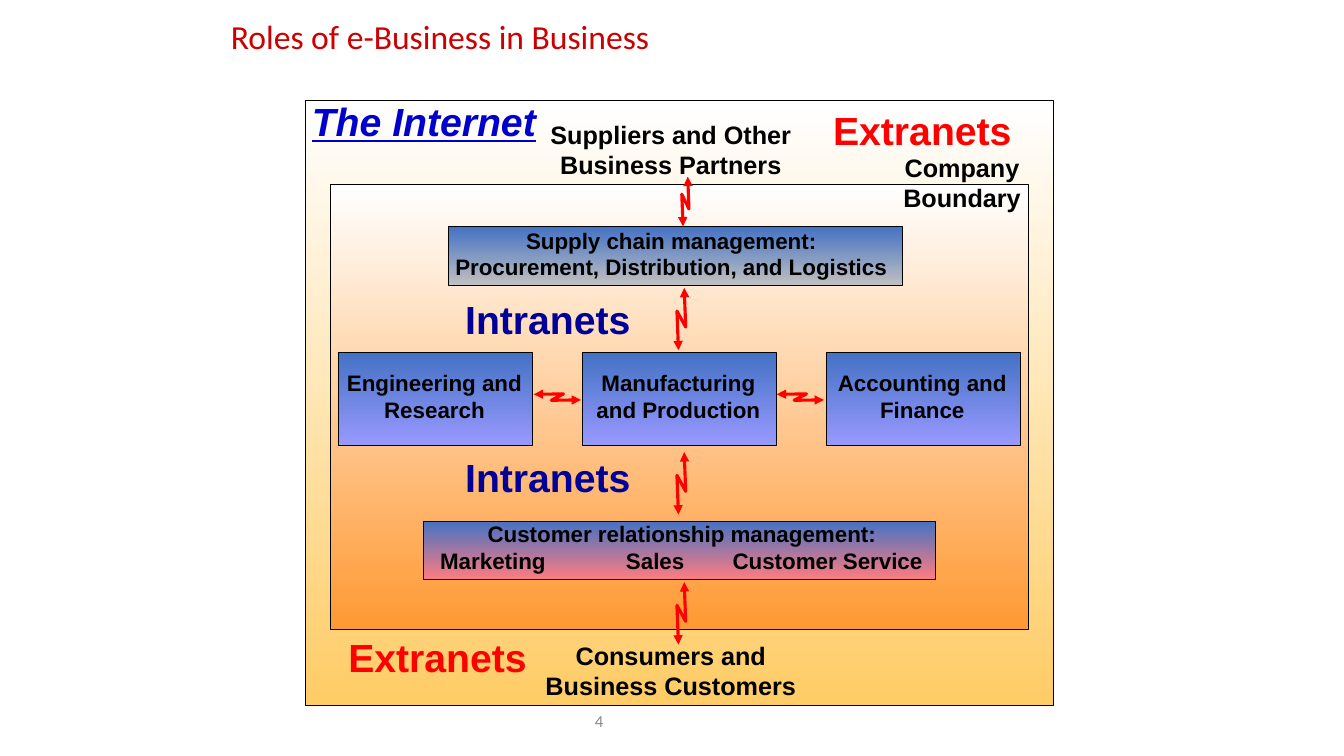
from dataclasses import dataclass

from lxml.etree import SubElement
from pptx import Presentation
from pptx.dml.color import RGBColor
from pptx.enum.shapes import MSO_SHAPE as Shape
from pptx.enum.text import MSO_ANCHOR as Anchor, MSO_AUTO_SIZE as AutoSize, PP_ALIGN as Align
from pptx.oxml.ns import qn
from pptx.util import Pt

SCALE = 9144


@dataclass(frozen=True)
class Theme:
    """Colours, fonts and type sizes of the slide."""
    black: str = "000000"
    white: str = "FFFFFF"
    red: str = "FF0000"
    title: str = "CC0000"
    internet: str = "0000CC"
    intranet: str = "000099"
    grey: str = "898989"
    sand: str = "FFCC66"
    orange: str = "FF9933"
    blue: str = "4472C4"
    lilac: str = "9999FF"
    pink: str = "FF7C80"
    silver: str = "C0C0C0"
    heading_font: str = "Calibri"
    body_font: str = "Arial"
    net_size: int = 28
    title_size: int = 24
    partner_size: int = 18
    unit_size: int = 16
    number_size: int = 12


@dataclass(frozen=True)
class Box:
    """A rectangle in px."""
    x: int
    y: int
    w: int
    h: int

    def at(self, dx, dy, w, h):
        """Return a box offset from this one."""
        return Box(self.x + dx, self.y + dy, w, h)

    def emu(self):
        """Return left, top, width and height in EMU."""
        return [n * SCALE for n in (self.x, self.y, self.w, self.h)]


T = Theme()
NET = dict(size=T.net_size)
PARTNER = dict(size=T.partner_size)
BOLT = [(1, 0), (0.44, 0.73), (0.56, 0.27), (0, 1)]


def write(tf, text, size=T.unit_size, color=T.black, font=T.body_font, bold=True,
          italic=False, underline=False, align=Align.CENTER, spacing=None):
    """Fill a text frame, one paragraph a line."""
    for i, line in enumerate(text.split("\n")):
        p = tf.paragraphs[0] if i == 0 else tf.add_paragraph()
        p.alignment, p.line_spacing = align, spacing
        r = p.add_run()
        r.text = line
        f = r.font
        f.name, f.size, f.color.rgb = font, Pt(size), RGBColor.from_string(color)
        f.bold, f.italic, f.underline = bold, italic, underline


def add_label(slide, box, text, wrap=False, anchor=Anchor.TOP, **fmt):
    """Add a text box."""
    tf = slide.shapes.add_textbox(*box.emu()).text_frame
    tf.word_wrap, tf.vertical_anchor = wrap, anchor
    tf.auto_size = AutoSize.NONE if wrap else AutoSize.SHAPE_TO_FIT_TEXT
    write(tf, text, **fmt)


def add_panel(slide, box, top, bottom):
    """Add an outlined rectangle shaded from top to bottom."""
    sp = slide.shapes.add_shape(Shape.RECTANGLE, *box.emu())
    sp.shadow.inherit = False
    sp.fill.gradient()
    sp.fill.gradient_angle = 270
    for stop, color, position in zip(sp.fill.gradient_stops, (top, bottom), (0, 1)):
        stop.color.rgb, stop.position = RGBColor.from_string(color), position
    sp.line.color.rgb, sp.line.width = RGBColor.from_string(T.black), Pt(0.75)


def add_bolt(slide, box, rotation):
    """Add a zigzag double arrow across a box, then turn it."""
    left, top, width, height = box.emu()
    start, *rest = [(round(left + u * width), round(top + v * height)) for u, v in BOLT]
    builder = slide.shapes.build_freeform(*start)
    builder.add_line_segments(rest, close=False)
    sp = builder.convert_to_shape()
    sp.rotation = rotation
    sp.shadow.inherit = False
    sp.fill.background()
    sp.line.color.rgb, sp.line.width = RGBColor.from_string(T.red), Pt(2.25)
    ln = sp.line._get_or_add_ln()
    for end in ("a:headEnd", "a:tailEnd"):
        SubElement(ln, qn(end), type="triangle")


def add_title(slide, box):
    """Place the slide title."""
    title = slide.shapes.title
    title.left, title.top, title.width, title.height = box.emu()
    tf = title.text_frame
    tf.vertical_anchor, tf.word_wrap = Anchor.MIDDLE, True
    write(tf, "Roles of e-Business in Business", size=T.title_size, color=T.title,
          font=T.heading_font, bold=False, align=Align.LEFT, spacing=0.9)


def add_internet(slide, box):
    """Label the networks and partners outside the company."""
    add_label(slide, box.at(233, 13, 259, 70), "Suppliers and Other\nBusiness Partners", **PARTNER)
    add_label(slide, box.at(-4, -8, 243, 57), "The Internet", color=T.internet,
              italic=True, underline=True, **NET)
    add_label(slide, box.at(583, 46, 137, 70), "Company\nBoundary", **PARTNER)
    add_label(slide, box.at(228, 530, 269, 70), "Consumers and\nBusiness Customers", **PARTNER)
    for dx, dy in ((513, 1), (32, 523)):
        add_label(slide, box.at(dx, dy, 198, 57), "Extranets", color=T.red, **NET)


def add_units(slide, box):
    """Place the row of three business units."""
    names = ("Engineering and\nResearch", "Manufacturing\nand Production", "Accounting and\nFinance")
    for i, name in enumerate(names):
        unit = box.at(242 * i, 0, 192, box.h)
        add_panel(slide, unit, T.blue, T.lilac)
        add_label(slide, unit.at(-4, 11, 198, 64), name)


def add_supply(slide, box):
    """Place the supply chain bar."""
    add_panel(slide, box, T.blue, T.silver)
    add_label(slide, box.at(-4, -5, box.w, 64),
              "Supply chain management:\nProcurement, Distribution, and Logistics")


def add_customers(slide, box):
    """Place the customer relationship bar with its three roles."""
    add_panel(slide, box, T.blue, T.pink)
    add_label(slide, box.at(5, -6, 503, 37), "Customer relationship management:")
    for name, center, width in (("Marketing", 69, 130), ("Sales", 230, 90),
                                ("Customer Service", 401, 214)):
        add_label(slide, box.at(center - width // 2, 21, width, 37), name)


def add_company(slide, box):
    """Fill the company boundary with its units, bars and arrows."""
    add_units(slide, box.at(8, 167, 676, 92))
    add_customers(slide, box.at(92, 334, 508, 58))
    add_supply(slide, box.at(117, 42, 450, 58))
    for dy in (262, 105):
        add_label(slide, box.at(123, dy, 185, 57), "Intranets", color=T.intranet, **NET)
    add_bolt(slide, box.at(334, 0, 36, 34), 318.7)
    for dy in (115, 278, 407):
        add_bolt(slide, box.at(323, dy, 50, 37), 311.7)
    for i in range(2):
        add_bolt(slide, box.at(206 + 241 * i, 197, 38, 28), 43.1)


def main():
    """Build and save the slide."""
    prs = Presentation()
    prs.slide_width, prs.slide_height = 4000 * SCALE // 3, 750 * SCALE
    s = prs.slides.add_slide(prs.slide_layouts[5])
    add_label(s, Box(436, 695, 317, 40), "4", wrap=True, anchor=Anchor.MIDDLE,
              size=T.number_size, color=T.grey, font=T.heading_font, bold=False)
    add_title(s, Box(219, 5, 900, 66))
    internet = Box(303, 100, 742, 600)
    company = internet.at(25, 83, 692, 442)
    add_panel(s, internet, T.white, T.sand)
    add_panel(s, company, T.white, T.orange)
    add_internet(s, internet)
    add_company(s, company)
    prs.save("out.pptx")


if __name__ == "__main__":
    main()
